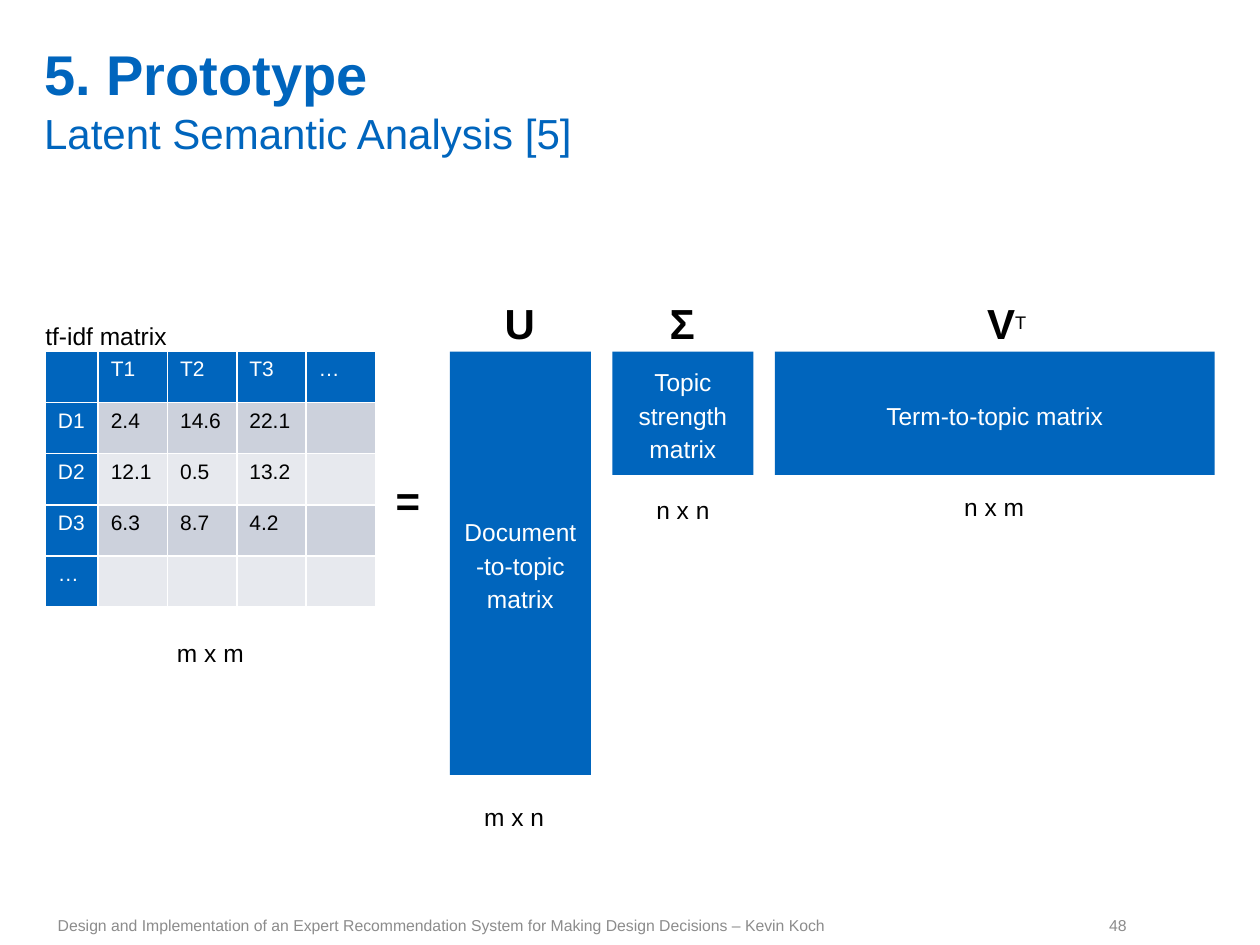
from pptx import Presentation
from pptx.dml.color import RGBColor
from pptx.enum.shapes import MSO_SHAPE
from pptx.enum.text import MSO_ANCHOR, MSO_AUTO_SIZE, PP_ALIGN
from pptx.util import Inches, Pt

COLORS = {
    "blue": "0065BD",
    "white": "FFFFFF",
    "black": "000000",
    "gray": "8C8C8C",
    "band_dark": "CCD1DC",
    "band_light": "E7E9EE",
}


class MatrixSlide:
    """Style and drawing methods for the matrix decomposition slide."""

    font = "Arial"

    def __init__(self, deck):
        self.page = deck.slides.add_slide(deck.slide_layouts[5])

    def color(self, name):
        return RGBColor.from_string(COLORS[name])

    def format_span(self, span, size, color, bold=False):
        span.font.name = self.font
        span.font.size = Pt(size)
        span.font.bold = bold
        span.font.color.rgb = self.color(color)

    def format_frame(self, frame, size, color, align, spacing=1.0, bold=False):
        for para in frame.paragraphs:
            para.alignment = align
            para.line_spacing = spacing
            for span in para.runs:
                self.format_span(span, size, color, bold)

    def clear_margins(self, frame):
        frame.margin_left = frame.margin_right = 0
        frame.margin_top = frame.margin_bottom = 0

    def title(self, heading, subheading):
        box = self.page.shapes.title
        box.left, box.top = Inches(0.35), Inches(0.31)
        box.width, box.height = Inches(8.57), Inches(0.94)
        frame = box.text_frame
        self.clear_margins(frame)
        frame.auto_size = MSO_AUTO_SIZE.NONE
        frame.vertical_anchor = MSO_ANCHOR.BOTTOM
        frame.text = f"{heading}\v{subheading}"
        para = frame.paragraphs[0]
        para.alignment = PP_ALIGN.LEFT
        first, second = para.runs
        self.format_span(first, 32, "blue", bold=True)
        self.format_span(second, 24, "blue")

    def text(self, text, left, top, width, height):
        box = self.page.shapes.add_textbox(
            Inches(left), Inches(top), Inches(width), Inches(height))
        frame = box.text_frame
        frame.word_wrap = True
        frame.text = text
        return frame

    def label(self, text, left, top, width, align=PP_ALIGN.CENTER):
        frame = self.text(text, left, top, width, 0.31)
        self.clear_margins(frame)
        self.format_frame(frame, 14, "black", align, 1.5)

    def symbol(self, text, left, top, width, align=PP_ALIGN.CENTER, superscript=None):
        frame = self.text(text, left, top, width, 0.53)
        self.clear_margins(frame)
        self.format_frame(frame, 24, "black", align, 1.5, bold=True)
        if superscript:
            span = frame.paragraphs[0].add_run()
            span.text = superscript
            self.format_span(span, 18, "black")
            span._r.get_or_add_rPr().set("baseline", "30000")

    def footer(self, text, left, width, align):
        frame = self.text(text, left, 7.18, width, 0.32)
        frame.vertical_anchor = MSO_ANCHOR.MIDDLE
        self.format_frame(frame, 9, "gray", align)

    def matrix(self, text, left, width, height):
        box = self.page.shapes.add_shape(
            MSO_SHAPE.RECTANGLE, Inches(left), Inches(2.79), Inches(width), Inches(height))
        box.shadow.inherit = False
        box.fill.solid()
        box.fill.fore_color.rgb = self.color("blue")
        box.line.fill.background()
        frame = box.text_frame
        frame.word_wrap = True
        frame.vertical_anchor = MSO_ANCHOR.MIDDLE
        frame.text = text
        self.format_frame(frame, 14, "white", PP_ALIGN.CENTER, 1.14)

    def table(self, rows, left, top, widths, row_height):
        table = self.page.shapes.add_table(
            len(rows), len(widths), Inches(left), Inches(top),
            Inches(sum(widths)), Inches(row_height * len(rows))).table
        table.first_col = True
        for column, width in zip(table.columns, widths):
            column.width = Inches(width)
        for r, values in enumerate(rows):
            for c, value in enumerate(values):
                header = r == 0 or c == 0
                band = "band_dark" if r % 2 else "band_light"
                cell = table.cell(r, c)
                cell.fill.solid()
                cell.fill.fore_color.rgb = self.color("blue" if header else band)
                cell.text_frame.text = value
                self.format_frame(
                    cell.text_frame, 12, "white" if header else "black", PP_ALIGN.LEFT)


def main():
    deck = Presentation()
    deck.slide_width, deck.slide_height = Inches(10), Inches(7.5)
    slide = MatrixSlide(deck)

    slide.title("5. Prototype", "Latent Semantic Analysis [5]")
    slide.table(
        [
            ["", "T1", "T2", "T3", "…"],
            ["D1", "2.4", "14.6", "22.1", ""],
            ["D2", "12.1", "0.5", "13.2", ""],
            ["D3", "6.3", "8.7", "4.2", ""],
            ["…", "", "", "", ""],
        ],
        0.36, 2.79, [0.42] + [0.55] * 4, 0.405)

    slide.matrix("Document-to-topic\nmatrix", 3.57, 1.12, 3.36)
    slide.matrix("Topic strength\nmatrix", 4.86, 1.12, 0.98)
    slide.matrix("Term-to-topic matrix", 6.15, 3.49, 0.98)

    slide.symbol("=", 3.14, 3.57, 0.43, PP_ALIGN.LEFT)
    slide.symbol("U", 3.88, 2.16, 0.49)
    slide.symbol("Σ", 5.21, 2.16, 0.41)
    slide.symbol("V", 7.61, 2.16, 0.76, superscript="T")

    slide.label("tf-idf matrix", 0.36, 2.43, 1.22, PP_ALIGN.LEFT)
    for size, left, top in [
        ("m x m", 1.06, 4.95),
        ("m x n", 3.47, 6.25),
        ("n x n", 4.81, 3.81),
        ("n x m", 7.28, 3.79),
    ]:
        slide.label(size, left, top, 1.22)

    slide.footer(
        "Design and Implementation of an Expert Recommendation System "
        "for Making Design Decisions – Kevin Koch", 0.36, 8.01, PP_ALIGN.LEFT)
    slide.footer("48", 8.37, 0.67, PP_ALIGN.RIGHT)
    deck.save("out.pptx")


if __name__ == "__main__":
    main()
